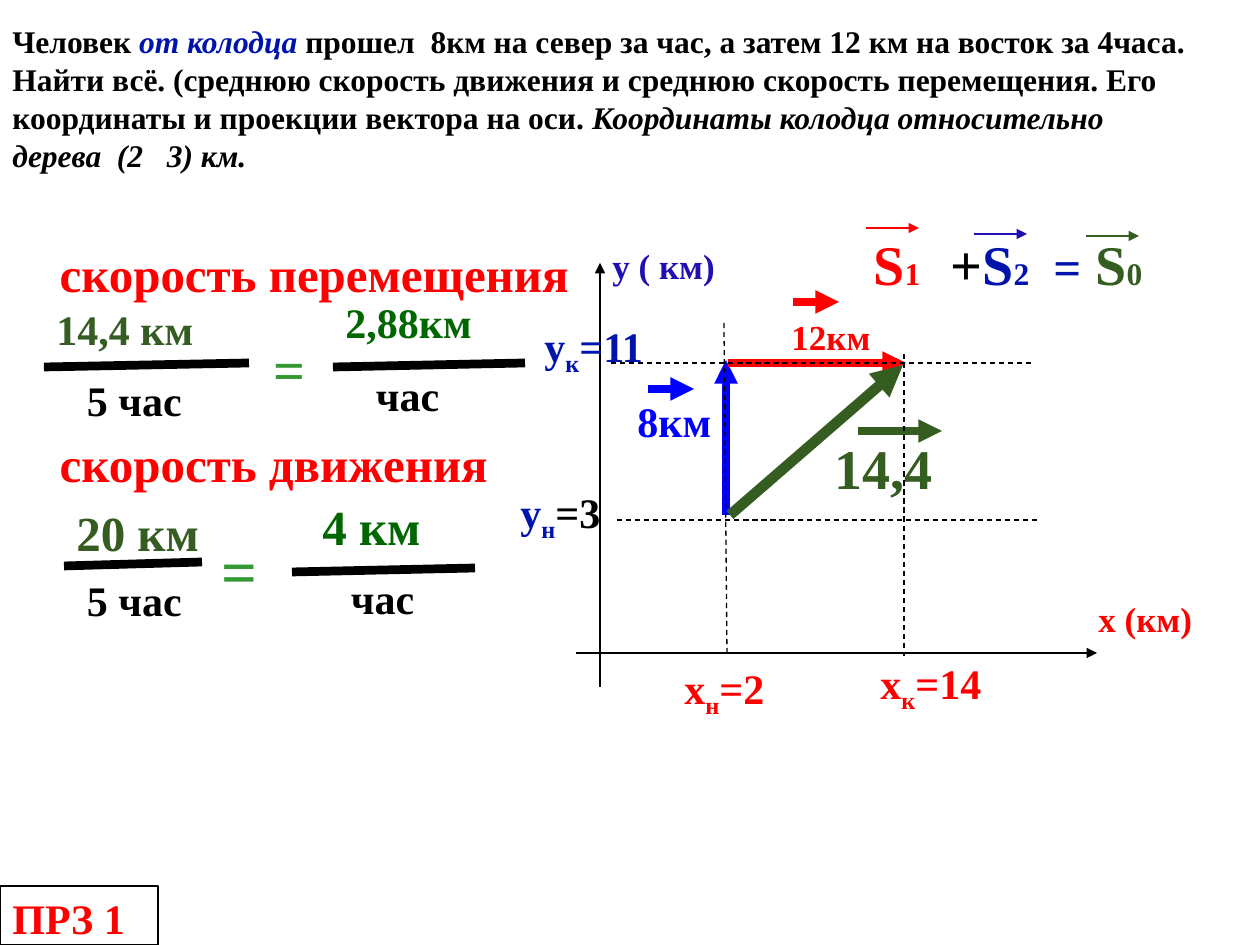
from lxml import etree
from pptx import Presentation
from pptx import util as u
from pptx.dml.color import RGBColor
from pptx.enum import dml, shapes, text
from pptx.oxml.ns import qn

PX_PER_INCH = 126
FONT = "Times New Roman"
BLACK = RGBColor(0x00, 0x00, 0x00)
WHITE = RGBColor(0xFF, 0xFF, 0xFF)
RED = RGBColor(0xFF, 0x00, 0x00)
BLUE = RGBColor(0x00, 0x00, 0xFF)
NAVY = RGBColor(0x00, 0x14, 0xAC)
VIOLET = RGBColor(0x22, 0x0F, 0xB1)
OLIVE = RGBColor(0x36, 0x5D, 0x21)
GREEN = RGBColor(0x00, 0x66, 0x00)
LIGHT_GREEN = RGBColor(0x33, 0x99, 0x33)


def px(value):
    return u.Emu(round(value * 914400 / PX_PER_INCH))


def add_run(paragraph, words, size, color, italic=False, subscript=False):
    run = paragraph.add_run()
    run.text = words
    run.font.name = FONT
    run.font.size = u.Pt(size)
    run.font.bold = True
    run.font.italic = italic
    run.font.color.rgb = color
    if subscript:
        run._r.get_or_add_rPr().set("baseline", "-25000")


def add_text(slide, left, top, width, size, runs, lines=1, wrap=True):
    """Add a box as tall as its lines; each run is (words, colour, options)."""
    height = round(2.1 * size * lines + 13)
    box = slide.shapes.add_textbox(px(left), px(top), px(width), px(height))
    frame = box.text_frame
    frame.word_wrap = wrap
    frame.auto_size = text.MSO_AUTO_SIZE.SHAPE_TO_FIT_TEXT
    paragraph = frame.paragraphs[0]
    for words, color, *options in runs:
        add_run(paragraph, words, **{"size": size, "color": color, **(options[0] if options else {})})
    return paragraph


def add_coordinate(slide, left, top, width, axis, index, value, color, value_color):
    add_text(slide, left, top, width, 24, [
        (axis, color), (index, color, {"subscript": True}), (value, value_color)])


def add_line(slide, start, end, color, width, arrow=False, dashed=False):
    line = slide.shapes.add_connector(
        shapes.MSO_CONNECTOR.STRAIGHT, px(start[0]), px(start[1]), px(end[0]), px(end[1]))
    line.line.color.rgb = color
    line.line.width = u.Pt(width)
    if dashed:
        line.line.dash_style = dml.MSO_LINE.DASH
    if arrow:
        etree.SubElement(line.line._get_or_add_ln(), qn("a:tailEnd"), type="triangle")
    etree.SubElement(line._element.spPr, qn("a:effectLst"))


def add_fraction(slide, bar, numerator, denominator):
    """Draw a slightly rising bar with a text above and a text below it."""
    left, right, middle = bar
    add_line(slide, (left, middle + 2), (right, middle - 2), BLACK, 5)
    add_text(slide, *numerator)
    add_text(slide, *denominator)


def add_tab_stops(paragraph, *positions):
    tabs = etree.SubElement(paragraph._p.get_or_add_pPr(), qn("a:tabLst"))
    for position in positions:
        etree.SubElement(tabs, qn("a:tab"), pos=str(px(position)), algn="l")


def add_label(slide, left, top, width, height, words):
    label = slide.shapes.add_shape(
        shapes.MSO_SHAPE.RECTANGLE, px(left), px(top), px(width), px(height))
    label.shadow.inherit = False
    label.fill.solid()
    label.fill.fore_color.rgb = WHITE
    label.line.color.rgb = BLACK
    label.line.width = u.Pt(0.75)
    label.text_frame.vertical_anchor = text.MSO_ANCHOR.TOP
    paragraph = label.text_frame.paragraphs[0]
    paragraph.alignment = text.PP_ALIGN.LEFT
    add_run(paragraph, words, 24, RED)


def add_problem(slide):
    add_text(slide, 0, 16, 1206, 18, [
        ("Человек ", BLACK),
        ("от колодца ", NAVY, {"italic": True}),
        ("прошел  8км на север за час, а затем 12 км на восток за 4часа. "
         "Найти всё. (среднюю скорость движения и среднюю скорость перемещения. "
         "Его координаты и проекции вектора на оси. ", BLACK),
        ("Координаты колодца относительно дерева  (2   3) км.", BLACK, {"italic": True}),
    ], lines=4)


def add_vectors(slide):
    # Path legs and displacement
    add_line(slide, (726, 515), (726, 360), BLUE, 4.5, arrow=True)
    add_line(slide, (728, 363), (906, 363), RED, 4.5, arrow=True)
    add_line(slide, (730, 515), (903, 365), OLIVE, 6, arrow=True)

    # Lengths, each under a vector sign
    for left, right, top, color, box, size, words in (
            (793, 839, 302, RED, (779, 309, 125), 20, "12км"),
            (648, 694, 389, BLUE, (625, 389, 135), 24, "8км"),
            (858, 942, 431, OLIVE, (822, 427, 131), 32, "14,4")):
        add_line(slide, (left, top), (right, top), color, 4.5, arrow=True)
        add_text(slide, *box, size, [(words, color)])

    # Vector sum
    small = {"size": 18}
    total = add_text(slide, 861, 223, 325, 32, [
        ("S", RED), ("1\t", RED, small), ("+", BLACK),
        ("S", NAVY), ("2\t", NAVY, small), ("=", NAVY, {"size": 28}),
        (" ", NAVY), ("S", OLIVE), ("0", OLIVE, small)])
    add_tab_stops(total, 77, 180)
    for left, top, color in ((866, 228, RED), (974, 234, VIOLET), (1086, 236, OLIVE)):
        add_line(slide, (left, top), (left + 53, top), color, 0.79, arrow=True)


def add_speeds(slide):
    # Average speed of displacement
    add_text(slide, 35, 237, 552, 28, [(" скорость перемещения", RED)])
    add_fraction(slide, (44, 249, 365),
                 (44, 297, 341, 24, [("14,4 км", OLIVE)]),
                 (64, 368, 173, 24, [(" 5 час", BLACK)]))
    add_text(slide, 261, 328, 98, 32, [("=", LIGHT_GREEN)])
    add_fraction(slide, (333, 525, 365),
                 (333, 290, 193, 24, [("2,88км", GREEN)]),
                 (353, 363, 122, 24, [(" час", BLACK)]))

    # Average speed of motion
    add_text(slide, 35, 427, 488, 28, [(" скорость движения", RED)])
    add_fraction(slide, (64, 202, 564),
                 (64, 496, 228, 28, [("20 км", OLIVE)]),
                 (64, 568, 131, 24, [(" 5 час", BLACK)]))
    add_text(slide, 209, 525, 66, 36, [("=", LIGHT_GREEN)])
    add_fraction(slide, (292, 475, 570),
                 (310, 490, 129, 28, [("4 км", GREEN)]),
                 (328, 566, 120, 24, [(" час", BLACK)]))


def add_axes(slide):
    add_line(slide, (600, 687), (600, 263), BLACK, 0.75, arrow=True)
    add_line(slide, (576, 653), (1097, 653), BLACK, 0.75, arrow=True)
    add_text(slide, 1086, 591, 129, 20, [("x (км)", RED)], wrap=False)
    add_text(slide, 600, 238, 129, 20, [("y ( км)", VIOLET)], wrap=False)

    # Projections of the start and the end
    for start, end in (((904, 354), (904, 656)), ((617, 520), (1038, 520)),
                       ((611, 363), (1032, 363)), ((724, 323), (727, 653))):
        add_line(slide, start, end, BLACK, 0.75, dashed=True)

    # Coordinates
    add_coordinate(slide, 508, 480, 108, "y", "н", "=3", NAVY, BLACK)
    add_coordinate(slide, 532, 314, 129, "y", "к", "=11", NAVY, NAVY)
    add_coordinate(slide, 672, 656, 124, "x", "н", "=2", RED, RED)
    add_coordinate(slide, 868, 651, 149, "x", "к", "=14", RED, RED)


def main():
    presentation = Presentation()
    presentation.slide_width = px(1260)
    presentation.slide_height = px(945)
    slide = presentation.slides.add_slide(presentation.slide_layouts[6])
    add_problem(slide)
    add_vectors(slide)
    add_speeds(slide)
    add_axes(slide)
    add_label(slide, 0, 886, 158, 59, "ПРЗ 1")
    presentation.save("out.pptx")


if __name__ == "__main__":
    main()
